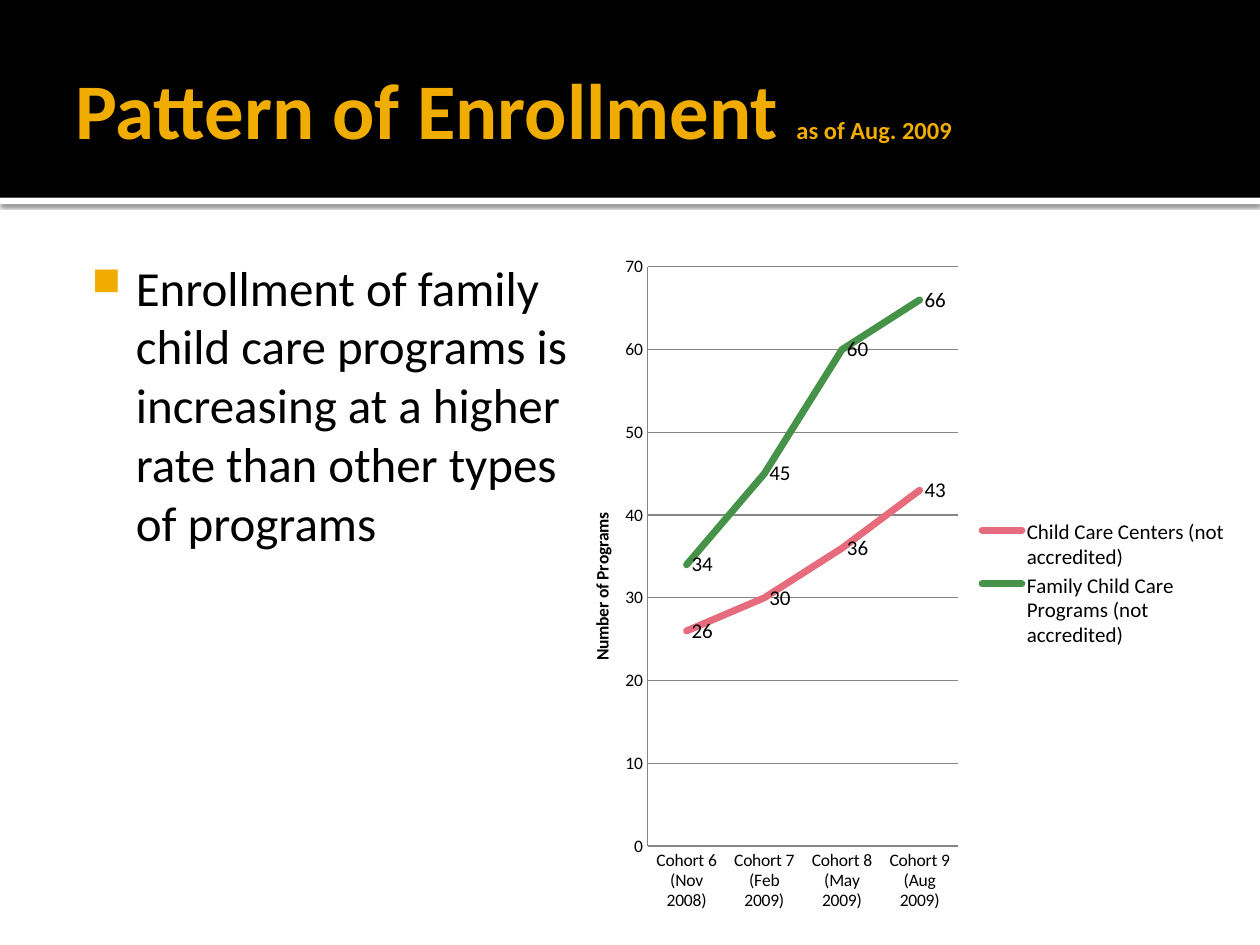
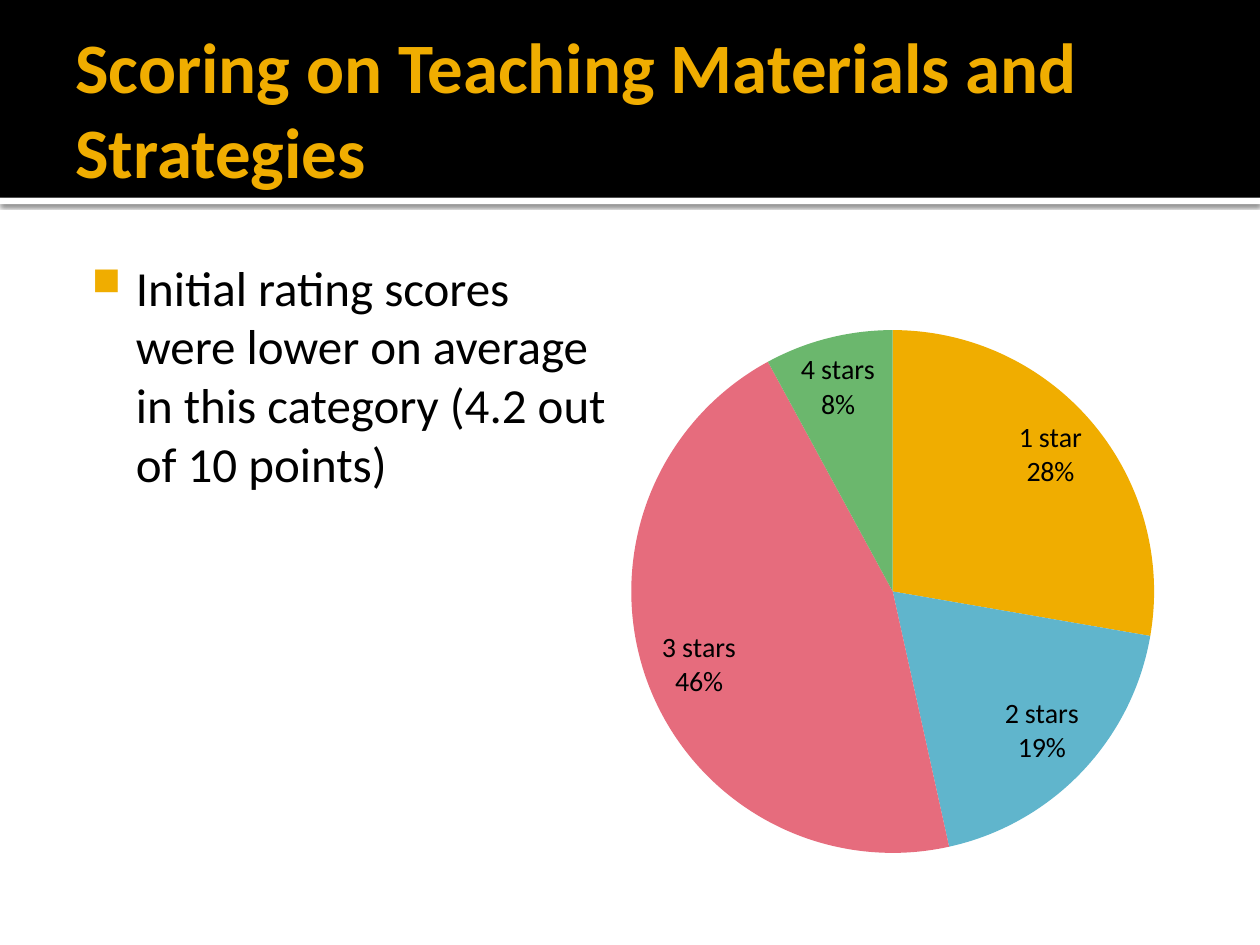
from dataclasses import dataclass

from lxml import etree
from pptx import Presentation
from pptx import util as u
from pptx.chart import data as chart_data
from pptx.dml.color import RGBColor
from pptx.enum import chart as ch
from pptx.enum import shapes, text
from pptx.oxml import parse_xml
from pptx.oxml.ns import nsdecls, qn


@dataclass(frozen=True)
class Theme:
    font: str = "Calibri"
    black: str = "000000"
    white: str = "FFFFFF"
    gold: str = "F0AD00"
    blue: str = "60B5CC"
    rose: str = "E66C7D"
    green: str = "6BB76D"
    deep_green: str = "479249"
    grey: str = "868686"
    title: float = 45
    long_title: float = 40.5
    date: float = 14
    body: float = 28
    axis: float = 10
    label: float = 12
    pie_label: float = 16


THEME = Theme()


def color(value):
    return RGBColor.from_string(value)


def style_font(font, size, value=THEME.black, bold=False):
    font.name = THEME.font
    font.size = u.Pt(size)
    font.bold = bold
    font.color.rgb = color(value)


def inches(*lengths):
    return [u.Inches(length) for length in lengths]


def add_band(page, top, height, fill):
    band = page.shapes.add_shape(
        shapes.MSO_SHAPE.RECTANGLE, *inches(0, top, 10, height))
    band.shadow.inherit = False
    band.fill.solid()
    band.fill.fore_color.rgb = color(fill)
    band.line.fill.background()
    return band


def add_shadow(shape):
    effects = shape._element.spPr.find(qn("a:effectLst"))
    effects.append(parse_xml(
        f'<a:outerShdw {nsdecls("a")} blurRad="{u.Pt(2.5)}" dist="{u.Pt(0.8)}" '
        f'dir="5400000" algn="tl" rotWithShape="0"><a:srgbClr val="{THEME.black}">'
        '<a:alpha val="60000"/></a:srgbClr></a:outerShdw>'))


def add_text(page, place, insets, runs, anchor=text.MSO_ANCHOR.TOP):
    frame = page.shapes.add_textbox(*inches(*place)).text_frame
    frame.word_wrap = True
    frame.vertical_anchor = anchor
    (frame.margin_left, frame.margin_top,
     frame.margin_right, frame.margin_bottom) = inches(*insets)
    para = frame.paragraphs[0]
    for words, size, value, bold in runs:
        span = para.add_run()
        span.text = words
        style_font(span.font, size, value, bold)
    return para


def add_title(page, *parts):
    runs = [(words, size, THEME.gold, True) for words, size in parts]
    add_text(page, (0.5, 0.17, 9, 1.37), (0.1, 0.05, 0.05, 0.05), runs,
             text.MSO_ANCHOR.MIDDLE)


def add_bullet(page, words):
    para = add_text(page, (0.5, 1.94, 4.42, 5.06), (0.1, 0.1, 0.1, 0.05),
                    [(words, THEME.body, THEME.black, False)])
    props = para._p.get_or_add_pPr()
    props.set("marL", str(u.Inches(0.48)))
    props.set("indent", str(u.Inches(-0.35)))
    bullet_color = etree.SubElement(props, qn("a:buClr"))
    etree.SubElement(bullet_color, qn("a:srgbClr"), val=THEME.gold)
    etree.SubElement(props, qn("a:buSzPct"), val="80000")
    etree.SubElement(props, qn("a:buChar"), char="■")


def add_page(deck):
    page = deck.slides.add_slide(deck.slide_layouts[6])
    page.background.fill.solid()
    page.background.fill.fore_color.rgb = color(THEME.white)
    add_shadow(add_band(page, 1.57, 0.05, THEME.white))
    add_band(page, 0, 1.57, THEME.black)
    return page


def set_layout(element, index, inner=False, **fractions):
    for old in element.findall(qn("c:layout")):
        element.remove(old)
    layout = etree.Element(qn("c:layout"))
    manual = etree.SubElement(layout, qn("c:manualLayout"))
    if inner:
        etree.SubElement(manual, qn("c:layoutTarget"), val="inner")
    for side in "xy":
        etree.SubElement(manual, qn(f"c:{side}Mode"), val="edge")
    for side, fraction in fractions.items():
        etree.SubElement(manual, qn(f"c:{side}"), val=str(fraction))
    element.insert(index, layout)


def add_chart(page, kind, place, categories, series):
    data = chart_data.CategoryChartData()
    data.categories = categories
    for name, values in series:
        data.add_series(name, values)
    chart = page.shapes.add_chart(kind, *inches(*place), data).chart
    chart.has_title = False
    chart.has_legend = False
    style_font(chart.font, THEME.axis)
    chart.plots[0].vary_by_categories = False
    return chart


def plot_area(chart):
    return chart._chartSpace.find(f".//{qn('c:plotArea')}")


def style_axis(axis):
    axis.major_tick_mark = axis.minor_tick_mark = ch.XL_TICK_MARK.NONE
    axis.format.line.color.rgb = color(THEME.grey)
    style_font(axis.tick_labels.font, THEME.axis)


def style_value_axis(axis, title):
    style_axis(axis)
    axis.minimum_scale, axis.maximum_scale, axis.major_unit = 0, 70, 10
    axis.has_major_gridlines = True
    axis.major_gridlines.format.line.color.rgb = color(THEME.grey)
    frame = axis.axis_title.text_frame
    frame._txBody.bodyPr.set("rot", "-5400000")
    frame._txBody.bodyPr.set("vert", "horz")
    span = frame.paragraphs[0].add_run()
    span.text = title
    style_font(span.font, THEME.axis, bold=True)
    set_layout(axis.axis_title._element, 1, x=0.045, y=0.39)


def add_legend(chart):
    chart.has_legend = True
    chart.legend.position = ch.XL_LEGEND_POSITION.RIGHT
    chart.legend.include_in_layout = False
    style_font(chart.legend.font, THEME.label)
    set_layout(chart.legend._element, 1, x=0.61, y=0.4, w=0.38, h=0.2)


def add_enrollment_chart(page):
    programs = [
        ("Child Care Centers (not accredited)", (26, 30, 36, 43), THEME.rose),
        ("Family Child Care Programs (not accredited)", (34, 45, 60, 66),
         THEME.deep_green),
    ]
    cohorts = ["Cohort 6 (Nov 2008)", "Cohort 7 (Feb 2009)",
               "Cohort 8 (May 2009)", "Cohort 9 (Aug 2009)"]
    chart = add_chart(page, ch.XL_CHART_TYPE.LINE, (4.42, 1.94, 5.42, 5.39),
                      cohorts, [program[:2] for program in programs])
    for series, (_, _, value) in zip(chart.plots[0].series, programs):
        series.smooth = False
        series.marker.style = ch.XL_MARKER_STYLE.NONE
        series.format.line.width = u.Pt(4)
        series.format.line.color.rgb = color(value)
        series._element.spPr.find(qn("a:ln")).set("cap", "rnd")
        labels = series.data_labels
        labels.show_value = True
        labels.position = ch.XL_LABEL_POSITION.RIGHT
        style_font(labels.font, THEME.label)
    style_axis(chart.category_axis)
    style_value_axis(chart.value_axis, "Number of Programs")
    add_legend(chart)
    set_layout(plot_area(chart), 0, True, x=0.133, y=0.033, w=0.455, h=0.853)


def add_rating_chart(page):
    ratings = [("1 star", 28, THEME.gold), ("2 stars", 19, THEME.blue),
               ("3 stars", 46, THEME.rose), ("4 stars", 8, THEME.green)]
    names, values, colors = zip(*ratings)
    chart = add_chart(page, ch.XL_CHART_TYPE.PIE, (4.67, 1.92, 4.83, 5),
                      names, [("Series 1", values)])
    chart.plots[0].vary_by_categories = True
    series = chart.plots[0].series[0]
    for index, value in enumerate(colors):
        fill = series.points[index].format.fill
        fill.solid()
        fill.fore_color.rgb = color(value)
    labels = series.data_labels
    labels.show_value = False
    labels.show_category_name = labels.show_percentage = True
    labels.number_format = "0%"
    labels.number_format_is_linked = False
    labels.position = ch.XL_LABEL_POSITION.BEST_FIT
    style_font(labels.font, THEME.pie_label)
    separator = etree.Element(qn("c:separator"))
    separator.text = "\n"
    labels._element.find(qn("c:showBubbleSize")).addnext(separator)
    set_layout(plot_area(chart), 0, True, x=0.07, y=0.14, w=0.86, h=0.83)


def main():
    deck = Presentation()
    deck.slide_width, deck.slide_height = inches(10, 7.5)

    page = add_page(deck)
    add_title(page, ("Pattern of Enrollment ", THEME.title),
              ("as of Aug. 2009", THEME.date))
    add_bullet(page, "Enrollment of family child care programs is increasing "
                     "at a higher rate than other types of programs")
    add_enrollment_chart(page)

    page = add_page(deck)
    add_title(page, ("Scoring on Teaching Materials and Strategies",
                     THEME.long_title))
    add_bullet(page, "Initial rating scores were lower on average in this "
                     "category (4.2 out of 10 points)")
    add_rating_chart(page)

    deck.save("out.pptx")


if __name__ == "__main__":
    main()
